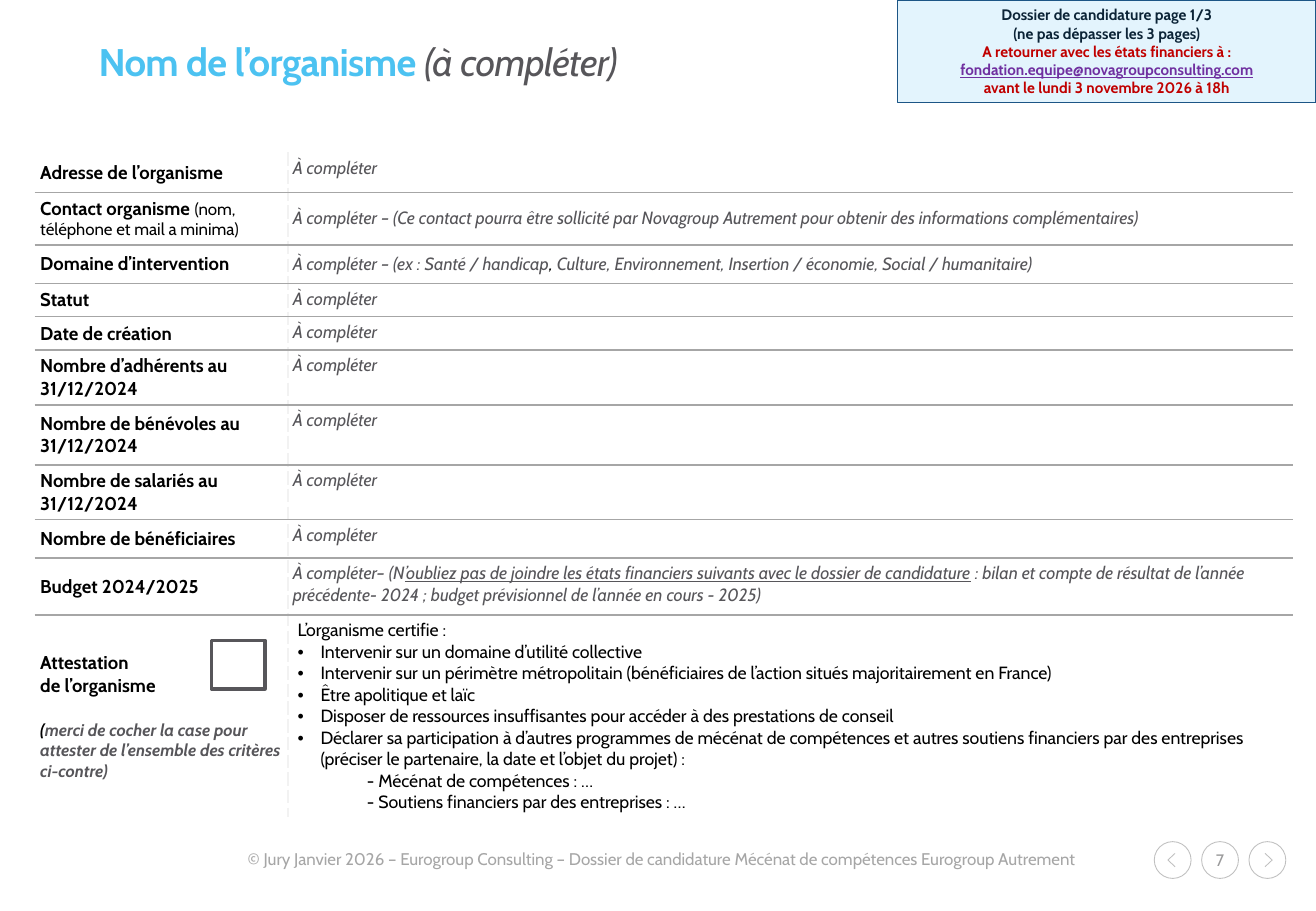
"""Build the first page of a skills-sponsorship application form."""
import pptx
import pptx.dml.color
import pptx.enum.shapes
import pptx.enum.text
import pptx.oxml
import pptx.oxml.ns
import pptx.util

Cm, Pt = pptx.util.Cm, pptx.util.Pt
ALIGN, ANCHOR = pptx.enum.text.PP_ALIGN, pptx.enum.text.MSO_ANCHOR
SHAPE = pptx.enum.shapes.MSO_SHAPE
COLOURS = {
    "white": "FFFFFF", "black": "000000", "sky": "4CC2F1", "slate": "57565A",
    "rule": "A6A6A6", "divider": "F2F2F2", "ring": "BFBFBF", "number": "9A9A9B",
    "pale": "E3F4FD", "blue": "1C5686", "navy": "0C2437", "red": "C00000", "purple": "7030A0",
}
RGB = {name: pptx.dml.color.RGBColor.from_string(value) for name, value in COLOURS.items()}
LABEL = {"size": Pt(11), "bold": True, "colour": "black"}
DETAIL = {"size": Pt(10), "colour": "black"}
ANSWER = {"size": Pt(10.5), "italic": True, "colour": "slate"}
CRITERION = {"size": Pt(10.5), "colour": "black"}


def write(para, spans):
    """Add (text, format) spans to a paragraph."""
    for text, look in spans:
        span = para.add_run()
        span.text = text
        span.font.name = "Cabin"
        span.font.color.rgb = RGB[look["colour"]]
        for key, value in look.items():
            if key != "colour":
                setattr(span.font, key, value)


def outline(shape, fill, line, width):
    """Give a shape its fill and line without a shadow."""
    shape.shadow.inherit = False
    if fill:
        shape.fill.solid()
        shape.fill.fore_color.rgb = RGB[fill]
    else:
        shape.fill.background()
    shape.line.color.rgb = RGB[line]
    shape.line.width = Pt(width)


deck = pptx.Presentation()
deck.slide_width, deck.slide_height = Cm(27.51), Cm(19.05)
page = deck.slides.add_slide(deck.slide_layouts[5])

title = page.shapes.title
title.left, title.top, title.width, title.height = Cm(2.06), Cm(0.89), Cm(16.38), Cm(0.94)
title_format = {
    "margin_left": 0, "margin_right": 0, "margin_top": 0, "margin_bottom": 0, "word_wrap": True,
    "vertical_anchor": ANCHOR.MIDDLE, "auto_size": pptx.enum.text.MSO_AUTO_SIZE.NONE,
}
for key, value in title_format.items():
    setattr(title.text_frame, key, value)
para = title.text_frame.paragraphs[0]
para.alignment, para.line_spacing = ALIGN.LEFT, 0.86
write(para, [
    ("Nom de l’organisme ", {"size": Pt(22.8), "bold": True, "colour": "sky"}),
    ("(à compléter)", {"size": Pt(22.8), "bold": False, "italic": True, "colour": "slate"}),
])
for span in para.runs:
    span.font._element.set("spc", "-40")

todo = [("À compléter", ANSWER)]
rows = [
    (0.82, [("Adresse de l’organisme", LABEL)], todo),
    (1.1, [("Contact organisme ", LABEL), ("(nom, téléphone et mail a minima)", DETAIL)],
     [("À compléter – (Ce contact pourra être sollicité par Novagroup Autrement pour obtenir "
       "des informations complémentaires)", ANSWER)]),
    (0.8, [("Domaine d’intervention", LABEL)],
     [("À compléter – (ex : Santé / handicap", ANSWER), (", ", {**ANSWER, "colour": "black"}),
      ("Culture, Environnement, Insertion / économie, Social / humanitaire)", ANSWER)]),
    (0.7, [("Statut", LABEL)], todo),
    (0.7, [("Date de création", LABEL)], todo),
    (1.15, [("Nombre d’adhérents au 31/12/2024", LABEL)], todo),
    (1.25, [("Nombre de bénévoles au 31/12/2024", LABEL)], todo),
    (1.15, [("Nombre de salariés au 31/12/2024", LABEL)], todo),
    (0.8, [("Nombre de bénéficiaires", LABEL)], todo),
    (1.19, [("Budget 2024/2025", LABEL)],
     [("À compléter– (N", ANSWER),
      ("’oubliez pas de joindre les états financiers suivants avec le dossier de candidature",
       {**ANSWER, "underline": True}),
      (" : bilan et compte de résultat de l’année précédente- 2024 ; budget prévisionnel "
       "de l’année en cours - 2025)", ANSWER)]),
    (4.25, [("Attestation", LABEL)], [("L’organisme certifie :", CRITERION)]),
]
last = len(rows) - 1
middle_answers = {1, 2, last}
table = page.shapes.add_table(
    len(rows), 2, Cm(0.74), Cm(3.2), Cm(26.28), Cm(sum(row[0] for row in rows))).table
table.first_row = table.horz_banding = False
table.columns[0].width, table.columns[1].width = Cm(5.28), Cm(21)
for index, (height, *contents) in enumerate(rows):
    table.rows[index].height = Cm(height)
    for column, spans in enumerate(contents):
        cell = table.cell(index, column)
        cell.margin_left = Cm(0.2) if (index, column) == (last, 1) else Cm(0.1)
        cell.margin_right = cell.margin_top = cell.margin_bottom = Cm(0.1)
        middle = column == 0 or index in middle_answers
        cell.vertical_anchor = ANCHOR.MIDDLE if middle else ANCHOR.TOP
        cell.fill.solid()
        cell.fill.fore_color.rgb = RGB["white"]
        write(cell.text_frame.paragraphs[0], spans)
        edges = [("lnR" if column == 0 else "lnL", "divider", "sysDash")]
        if index > 0:
            edges.append(("lnT", "rule", "solid"))
        if index < last:
            edges.append(("lnB", "rule", "solid"))
        for place, (tag, colour, dash) in enumerate(edges):
            cell._tc.get_or_add_tcPr().insert(place, pptx.oxml.parse_xml(
                f'<a:{tag} {pptx.oxml.ns.nsdecls("a")} w="12700"><a:solidFill>'
                f'<a:srgbClr val="{COLOURS[colour]}"/></a:solidFill>'
                f'<a:prstDash val="{dash}"/></a:{tag}>'))

attestation = table.cell(last, 0).text_frame
write(attestation.add_paragraph(), [("de l’organisme", LABEL)])
para = attestation.add_paragraph()
para.space_before = Pt(13.4)
hint = {"size": Pt(10), "bold": True, "italic": True}
write(para, [
    ("(", {**hint, "colour": "black"}),
    ("merci de cocher la case pour attester de l’ensemble des critères ci-contre)",
     {**hint, "colour": "slate"}),
])

criteria = [
    ("Intervenir sur un domaine d’utilité collective", True),
    ("Intervenir sur un périmètre métropolitain (bénéficiaires de l’action situés "
     "majoritairement en France)", True),
    ("Être apolitique et laïc", True),
    ("Disposer de ressources insuffisantes pour accéder à des prestations de conseil", True),
    ("Déclarer sa participation à d’autres programmes de mécénat de compétences et autres "
     "soutiens financiers par des entreprises (préciser le partenaire, la date et l’objet "
     "du projet) :", True),
    ("- Mécénat de compétences : …", False),
    ("- Soutiens financiers par des entreprises : …", False),
]
for text, bulleted in criteria:
    para = table.cell(last, 1).text_frame.add_paragraph()
    properties = para._p.get_or_add_pPr()
    properties.set("marL", str(Cm(0.48 if bulleted else 1.45)))
    properties.set("indent", str(Cm(-0.48 if bulleted else 0)))
    if bulleted:
        for bullet in ('buFont {} typeface="Arial"', 'buChar {} char="•"'):
            properties.append(pptx.oxml.parse_xml(
                f'<a:{bullet.format(pptx.oxml.ns.nsdecls("a"))}/>'))
    write(para, [(text, CRITERION)])

checkbox = page.shapes.add_shape(SHAPE.RECTANGLE, Cm(4.42), Cm(13.39), Cm(1.12), Cm(1.02))
outline(checkbox, "white", "slate", 2)

notice = page.shapes.add_shape(SHAPE.RECTANGLE, Cm(18.76), Cm(0), Cm(8.75), Cm(2.15))
outline(notice, "pale", "blue", 0.75)
notice.text_frame.vertical_anchor = ANCHOR.MIDDLE
notice_lines = [
    ("Dossier de candidature page 1/3", "navy"),
    ("(ne pas dépasser les 3 pages)", "navy"),
    ("A retourner avec les états financiers à :", "red"),
    ("fondation.equipe@novagroupconsulting.com", "purple"),
    ("avant le lundi 3 novembre 2026 à 18h", "red"),
]
for index, (text, colour) in enumerate(notice_lines):
    para = notice.text_frame.add_paragraph() if index else notice.text_frame.paragraphs[0]
    para.alignment = ALIGN.CENTER
    write(para, [(text, {"size": Pt(9), "bold": True, "underline": "@" in text, "colour": colour})])

footer = page.shapes.add_textbox(Cm(4.93), Cm(17.63), Cm(18.87), Cm(0.69))
footer.text_frame.word_wrap = False
write(footer.text_frame.paragraphs[0], [
    ("© Jury Janvier 2026 – Eurogroup Consulting – Dossier de candidature Mécénat de "
     "compétences Eurogroup Autrement", {"size": Pt(10), "colour": "rule"})])

button_size, button_top = 0.77, 17.6
for direction in (-1, 0, 1):
    left = 25.12 + direction * 0.99
    button = page.shapes.add_shape(
        SHAPE.OVAL, Cm(left), Cm(button_top), Cm(button_size), Cm(button_size))
    outline(button, None, "ring", 0.5)
    if direction:
        centre_x, centre_y = left + button_size / 2, button_top + button_size / 2
        back, tip = Cm(centre_x - direction * 0.05), Cm(centre_x + direction * 0.1)
        builder = page.shapes.build_freeform(back, Cm(centre_y - 0.14))
        builder.add_line_segments([(tip, Cm(centre_y)), (back, Cm(centre_y + 0.14))], close=False)
        outline(builder.convert_to_shape(), None, "ring", 0.5)
    else:
        frame = button.text_frame
        frame.margin_left = frame.margin_right = frame.margin_top = frame.margin_bottom = 0
        frame.word_wrap, frame.vertical_anchor = False, ANCHOR.MIDDLE
        frame.paragraphs[0].alignment = ALIGN.CENTER
        write(frame.paragraphs[0], [("7", {"size": Pt(9.8), "colour": "number"})])

deck.save("out.pptx")
